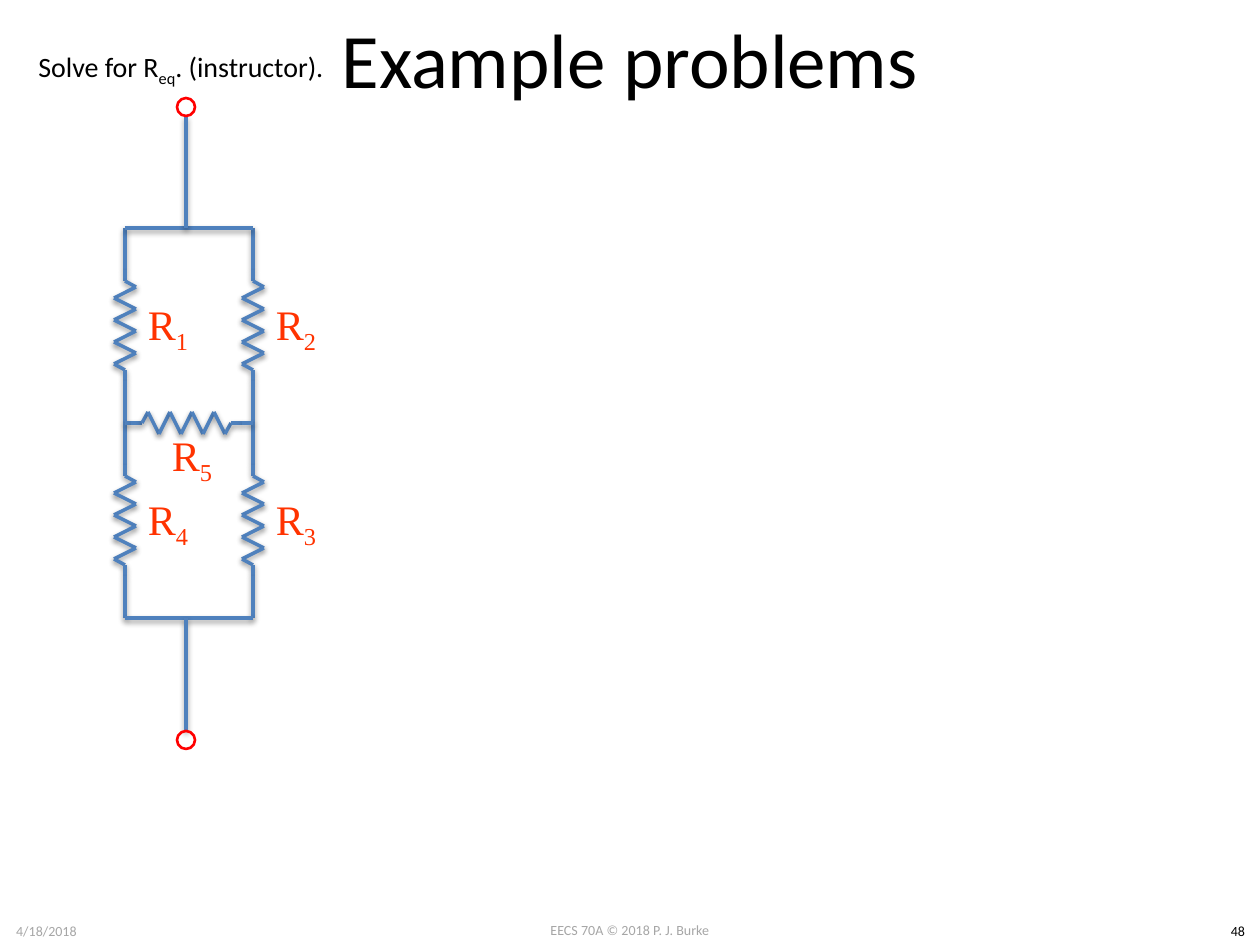
"""Builds the slide with the bridge resistor network example."""
from itertools import pairwise

from lxml.etree import fromstring
from pptx import Presentation
from pptx.dml.color import RGBColor
from pptx.enum.shapes import MSO_CONNECTOR, MSO_SHAPE
from pptx.enum.text import MSO_ANCHOR, MSO_AUTO_SIZE, PP_ALIGN
from pptx.util import Emu, Pt

PX_PER_INCH = 126
BLACK = RGBColor(0x00, 0x00, 0x00)
GRAY = RGBColor(0xA6, 0xA6, 0xA6)
BLUE = RGBColor(0x4F, 0x81, 0xBD)
RED = RGBColor(0xFF, 0x00, 0x00)
ORANGE = RGBColor(0xFF, 0x33, 0x00)

LEFT, MIDDLE, RIGHT = 125, 186, 253
TOP, BRIDGE, BOTTOM = 228, 423, 618
TERMINAL_SIZE = 18
PEAKS, PEAK_STEP, AMPLITUDE = 8, 11, 11
WIRE_SHADOW = (
    '<a:effectLst xmlns:a="http://schemas.openxmlformats.org/drawingml/2006/main">'
    '<a:outerShdw blurRad="40000" dist="20000" dir="5400000" rotWithShape="0">'
    '<a:srgbClr val="000000"><a:alpha val="38000"/></a:srgbClr>'
    '</a:outerShdw></a:effectLst>'
)


def px(length):
    """Turn pixels into EMU."""
    return Emu(round(length * 914400 / PX_PER_INCH))


def format_paragraph(paragraph, font_name, size, color, align):
    """Set the font and alignment of a whole paragraph."""
    font = paragraph.font
    font.name, font.size = font_name, Pt(size)
    font.color.rgb = color
    paragraph.alignment = align


def add_text(shapes, box, parts, size, color, font_name="Calibri",
             align=PP_ALIGN.CENTER, anchor=MSO_ANCHOR.TOP, wrap=True):
    """Add a text box in which every second part is a subscript."""
    frame = shapes.add_textbox(*map(px, box)).text_frame
    frame.word_wrap = wrap
    frame.vertical_anchor = anchor
    frame.auto_size = MSO_AUTO_SIZE.NONE
    paragraph = frame.paragraphs[0]
    format_paragraph(paragraph, font_name, size, color, align)
    for index, part in enumerate(parts):
        run = paragraph.add_run()
        run.text = part
        if index % 2:
            run._r.get_or_add_rPr().set("baseline", "-25000")


def add_wires(shapes, points):
    """Join consecutive points with shadowed straight lines."""
    for start, end in pairwise(points):
        wire = shapes.add_connector(MSO_CONNECTOR.STRAIGHT, *map(px, start + end))
        wire.line.color.rgb = BLUE
        wire.line.width = Pt(2)
        wire._element.spPr.append(fromstring(WIRE_SHADOW))


def add_label(shapes, x, y, number):
    """Add a resistor name with its subscript number."""
    add_text(shapes, (x, y, 150, 92), ["R", number], 24, ORANGE,
             "Times New Roman", anchor=MSO_ANCHOR.MIDDLE)


def add_resistor(shapes, x, y, length, lead, vertical=True):
    """Draw a zigzag resistor with leads, running down or to the right."""
    first_peak = lead + 17
    last_peak = first_peak + (PEAKS - 1) * PEAK_STEP
    zigzag = [(first_peak + i * PEAK_STEP, AMPLITUDE * (-1) ** i) for i in range(PEAKS)]
    profile = [(0, 0), (lead, 0), (lead + 11, 0), *zigzag,
               (last_peak + 6, 0), (last_peak + 17, 0), (length, 0)]
    add_wires(shapes, [(x + side, y + along) if vertical else (x + along, y - side)
                       for along, side in profile])


def add_terminal(shapes, y):
    """Add an open red terminal circle on the middle line."""
    terminal = shapes.add_shape(MSO_SHAPE.OVAL, px(MIDDLE - TERMINAL_SIZE // 2), px(y),
                                px(TERMINAL_SIZE), px(TERMINAL_SIZE))
    terminal.shadow.inherit = False
    terminal.fill.background()
    terminal.line.color.rgb = RED
    terminal.line.width = Pt(1.5)


def add_title(slide, text):
    """Fill and place the title placeholder."""
    title = slide.shapes.title
    title.left, title.top, title.width, title.height = map(px, (63, -21, 1134, 157))
    title.text_frame.text = text
    title.text_frame.vertical_anchor = MSO_ANCHOR.MIDDLE
    format_paragraph(title.text_frame.paragraphs[0], "Calibri", 44, BLACK, PP_ALIGN.CENTER)


def add_circuit(shapes):
    """Draw the bridge network with its terminals and labels."""
    branches = [("1", LEFT, TOP), ("2", RIGHT, TOP),
                ("4", LEFT, BRIDGE), ("3", RIGHT, BRIDGE)]
    for number, x, y in branches:
        group = shapes.add_group_shape().shapes
        add_label(group, x - 32, y + 53, number)
        add_resistor(group, x, y, BRIDGE - TOP, 42)
    add_resistor(shapes.add_group_shape().shapes, LEFT, BRIDGE, RIGHT - LEFT, 6,
                 vertical=False)
    add_label(shapes, 117, 412, "5")
    for rail, terminal_top, wire_end in [(TOP, 98, 116), (BOTTOM, 731, 731)]:
        add_wires(shapes, [(LEFT, rail), (RIGHT, rail)])
        add_wires(shapes, [(MIDDLE, rail), (MIDDLE, wire_end)])
        add_terminal(shapes, terminal_top)


def main():
    """Build and save the slide."""
    presentation = Presentation()
    presentation.slide_width, presentation.slide_height = px(1260), px(945)
    slide = presentation.slides.add_slide(presentation.slide_layouts[5])
    shapes = slide.shapes
    add_title(slide, "Example problems")
    add_text(shapes, (26, 43, 326, 47), ["Solve for R", "eq", ". (instructor)."],
             16, BLACK, align=PP_ALIGN.LEFT, wrap=False)
    add_circuit(shapes)
    add_text(shapes, (483, 915, 294, 30), ["EECS 70A © 2018 P. J. Burke"], 8, GRAY)
    add_text(shapes, (0, 916, 93, 30), ["4/18/2018"], 8, GRAY)
    add_text(shapes, (1216, 916, 44, 30), ["48"], 8, BLACK)
    presentation.save("out.pptx")


if __name__ == "__main__":
    main()
